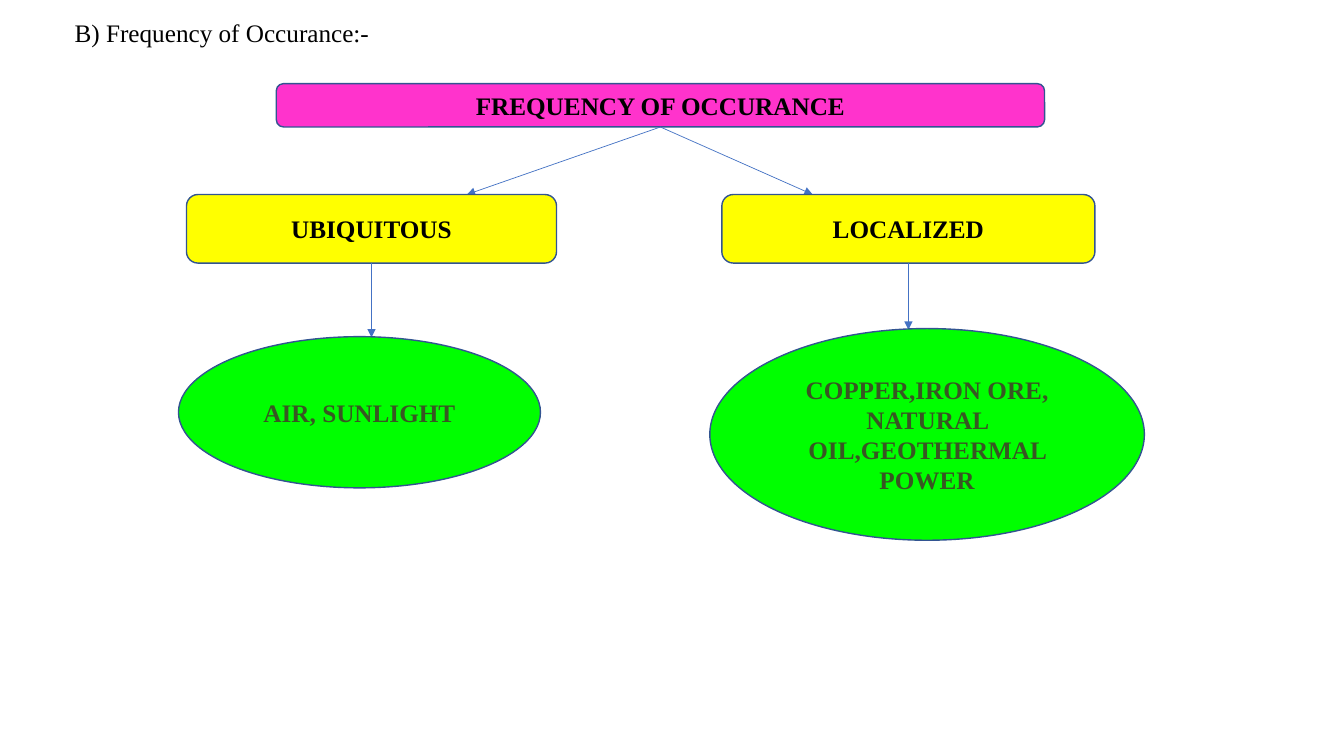
import pptx
import pptx.dml.color
import pptx.enum.shapes
import pptx.enum.text
import pptx.oxml.ns
import pptx.util
from lxml import etree

Inches = pptx.util.Inches
SHAPE = pptx.enum.shapes.MSO_SHAPE
ANCHOR = pptx.enum.text.MSO_ANCHOR
ALIGN = pptx.enum.text.PP_ALIGN
BODY_FONT = {"name": "Times New Roman", "size": pptx.util.Pt(18), "bold": False}
NODE_FONT = {**BODY_FONT, "bold": True}


def rgb(value):
    """Turn a hex string into a colour."""
    return pptx.dml.color.RGBColor.from_string(value)


def write(tf, lines, font, color, align, anchor):
    """Fill a text frame with one formatted paragraph per line."""
    tf.word_wrap = True
    tf.auto_size = pptx.enum.text.MSO_AUTO_SIZE.NONE
    tf.vertical_anchor = anchor
    for i, line in enumerate(lines):
        p = tf.add_paragraph() if i else tf.paragraphs[0]
        p.alignment = align
        r = p.add_run()
        r.text = line
        for key, value in font.items():
            setattr(r.font, key, value)
        r.font.color.rgb = rgb(color)


def add_heading(s, box, text):
    """Place the slide title in the box."""
    sp = s.shapes.title
    for key, value in zip(("left", "top", "width", "height"), box):
        setattr(sp, key, Inches(value))
    write(sp.text_frame, [text], BODY_FONT, "000000", ALIGN.LEFT, ANCHOR.TOP)


def add_node(s, box, kind, lines, fill, color="000000"):
    """Draw one labelled node of the tree."""
    sp = s.shapes.add_shape(kind, *map(Inches, box))
    sp.shadow.inherit = False
    sp.fill.solid()
    sp.fill.fore_color.rgb = rgb(fill)
    sp.line.color.rgb = rgb("325491")
    sp.line.width = pptx.util.Pt(1)
    write(sp.text_frame, lines, NODE_FONT, color, ALIGN.CENTER, ANCHOR.MIDDLE)


def add_arrow(s, start, end):
    """Draw a thin arrow from start to end."""
    line = s.shapes.add_connector(
        pptx.enum.shapes.MSO_CONNECTOR.STRAIGHT, *map(Inches, (*start, *end)))
    line.line.color.rgb = rgb("4472C4")
    line.line.width = pptx.util.Pt(0.5)
    qn = pptx.oxml.ns.qn
    etree.SubElement(line.line._get_or_add_ln(), qn("a:tailEnd"), type="triangle")
    etree.SubElement(line._element.spPr, qn("a:effectLst"))


def add_branch(s, root, entry_x, box, label, leaf_box, examples):
    """Draw a category with its arrow from the root and its examples."""
    left, top, width, height = box
    middle = left + width / 2
    add_arrow(s, root, (entry_x, top))
    add_node(s, box, SHAPE.ROUNDED_RECTANGLE, [label], "FFFF00")
    leaf_top = leaf_box[1]
    leaf_offset = abs(middle - leaf_box[0] - leaf_box[2] / 2) / leaf_box[2]
    add_arrow(s, (middle, top + height), (middle, leaf_top + leaf_offset / 4))
    add_node(s, leaf_box, SHAPE.OVAL, examples, "00FF00", "385723")


def add_tree(s, box):
    """Draw the root in the box and the two branches below it."""
    left, top, width, height = box
    add_node(s, box, SHAPE.ROUNDED_RECTANGLE, ["FREQUENCY OF OCCURANCE"], "FF33CC")
    root = (left + width / 2, top + height)
    row = top + 1.1
    add_branch(s, root, left + 1.89, (left - 0.89, row, 3.67, 0.68), "UBIQUITOUS",
               (left - 0.97, top + 2.51, 3.59, 1.5), ["AIR, SUNLIGHT"])
    add_branch(s, root, left + 5.32, (left + 4.42, row, 3.7, 0.68), "LOCALIZED",
               (left + 4.3, top + 2.43, 4.31, 2.1),
               ["COPPER,IRON ORE,", "NATURAL OIL,GEOTHERMAL POWER"])


def main():
    """Build and save the slide."""
    prs = pptx.Presentation()
    prs.slide_width, prs.slide_height = Inches(13.33), Inches(7.5)
    s = prs.slides.add_slide(prs.slide_layouts[5])
    add_heading(s, (0.64, 0.12, 12.39, 0.4), "B) Frequency of Occurance:-")
    add_tree(s, (2.74, 0.83, 7.62, 0.43))
    prs.save("out.pptx")


if __name__ == "__main__":
    main()
